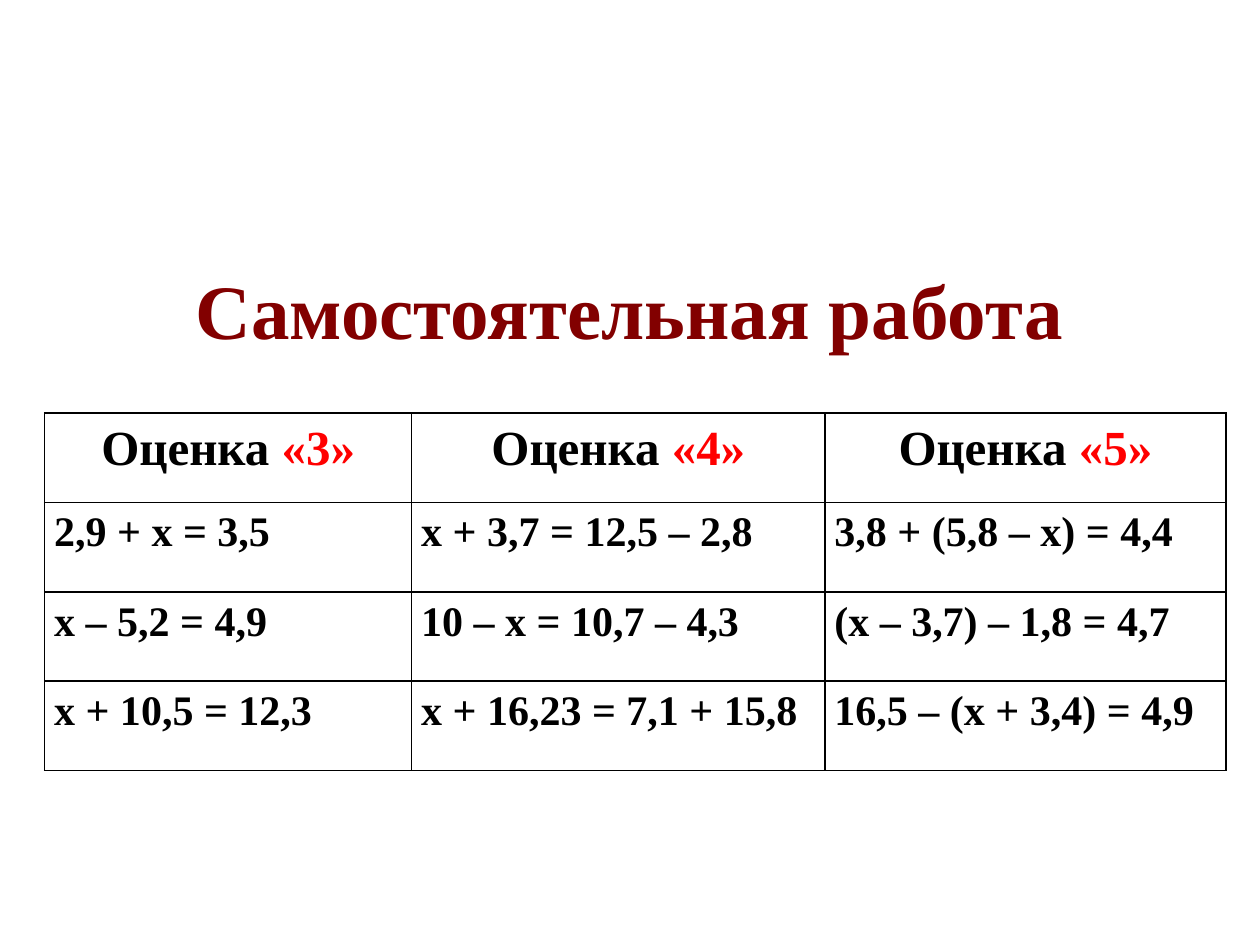
import pptx
import pptx.dml.color
import pptx.enum.text
import pptx.util
import lxml.etree

Cm = pptx.util.Cm
ALIGN = pptx.enum.text.PP_ALIGN
ANCHOR = pptx.enum.text.MSO_ANCHOR
NS = "http://schemas.openxmlformats.org/drawingml/2006/main"


def rgb(color):
    return pptx.dml.color.RGBColor.from_string(color)


def add_text(p, text, size=24, color="000000", align=ALIGN.JUSTIFY, spacing=1.15):
    p.alignment = align
    p.line_spacing = spacing
    r = p.add_run()
    r.text = text
    r.font.name = "Times New Roman"
    r.font.size = pptx.util.Pt(size)
    r.font.bold = True
    r.font.color.rgb = rgb(color)


prs = pptx.Presentation()
prs.slide_width, prs.slide_height = Cm(25.4), Cm(19.05)
s = prs.slides.add_slide(prs.slide_layouts[5])

title = s.shapes.title
title.left, title.top, title.width, title.height = Cm(0.69), Cm(4.93), Cm(24), Cm(2.59)
title.text_frame.vertical_anchor = ANCHOR.MIDDLE
add_text(title.text_frame.paragraphs[0], "Самостоятельная работа",
         size=44, color="820000", align=ALIGN.CENTER, spacing=1.0)

grades = ["«3»", "«4»", "«5»"]
equations = [
    ["2,9 + х = 3,5", "х + 3,7 = 12,5 – 2,8", "3,8 + (5,8 – х) = 4,4"],
    ["х – 5,2 = 4,9", "10 – х = 10,7 – 4,3", "(х – 3,7) – 1,8 = 4,7"],
    ["х + 10,5 = 12,3", "х + 16,23 = 7,1 + 15,8", "16,5 – (х + 3,4) = 4,9"],
]
col_widths = [7.4, 8.33, 8.08]
row_height = 1.8
row_count = len(equations) + 1

table = s.shapes.add_table(row_count, len(grades), Cm(0.9), Cm(8.33),
                           Cm(sum(col_widths)), Cm(row_height * row_count)).table
table.first_row = False
table.horz_banding = False
for col, width in zip(table.columns, col_widths):
    col.width = Cm(width)
for row in table.rows:
    row.height = Cm(row_height)

for cell in table.iter_cells():
    cell.margin_left = cell.margin_right = Cm(0.19)
    cell.margin_top = cell.margin_bottom = 0
    cell.fill.background()
    tc_pr = cell._tc.get_or_add_tcPr()
    for i, side in enumerate(["lnL", "lnR", "lnT", "lnB"]):
        ln = lxml.etree.Element(f"{{{NS}}}{side}", w=str(pptx.util.Pt(1)))
        fill = lxml.etree.SubElement(ln, f"{{{NS}}}solidFill")
        lxml.etree.SubElement(fill, f"{{{NS}}}srgbClr", val="000000")
        tc_pr.insert(i, ln)

for c, grade in enumerate(grades):
    p = table.cell(0, c).text_frame.paragraphs[0]
    add_text(p, "Оценка ", size=28, align=ALIGN.CENTER)
    add_text(p, grade, size=28, color="FF0000", align=ALIGN.CENTER)

for r, row in enumerate(equations, start=1):
    for c, equation in enumerate(row):
        add_text(table.cell(r, c).text_frame.paragraphs[0], equation)

prs.save("out.pptx")
